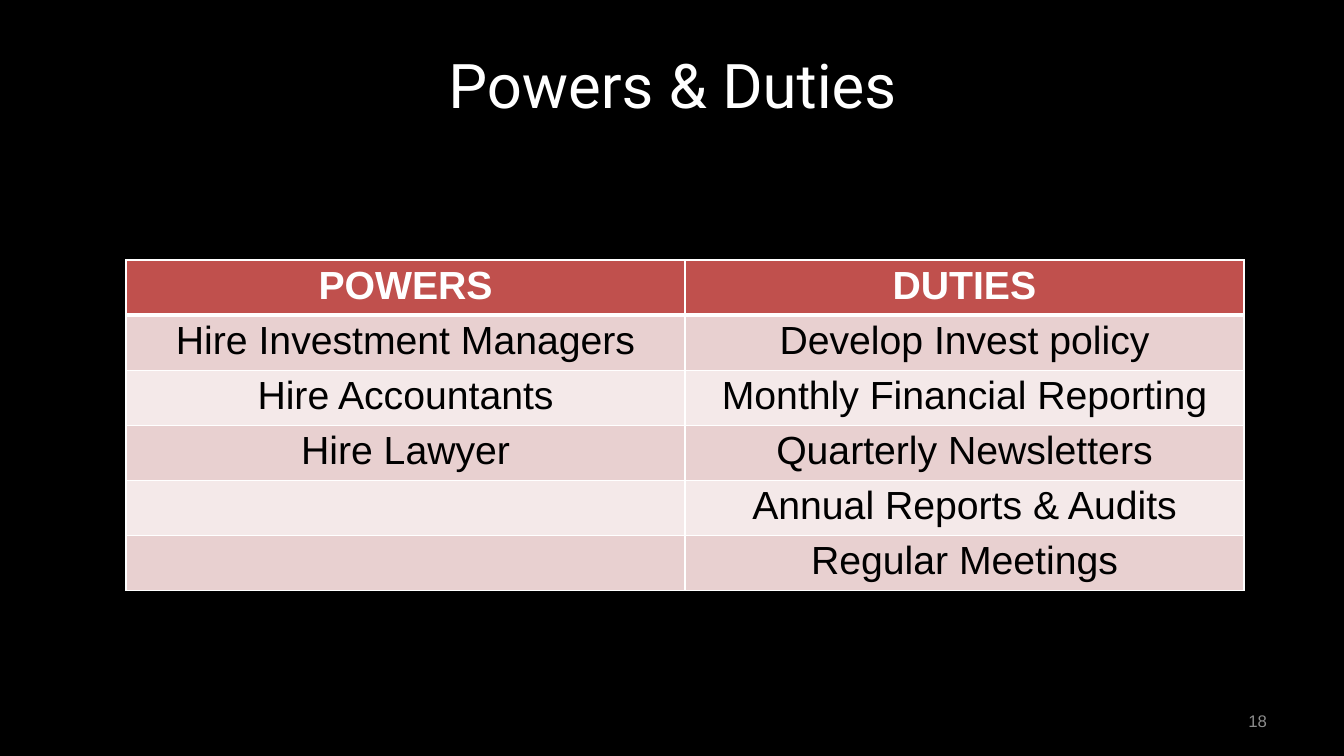
from lxml.etree import SubElement
from pptx import Presentation
from pptx.dml.color import RGBColor
from pptx.enum.text import MSO_ANCHOR as Anchor, PP_ALIGN as Align
from pptx.oxml.ns import qn
from pptx.util import Pt

# Content
TITLE = "Powers & Duties"
PAGE_NUMBER = "18"
ROWS = [
    ("POWERS", "DUTIES"),
    ("Hire Investment Managers", "Develop Invest policy"),
    ("Hire Accountants", "Monthly Financial Reporting"),
    ("Hire Lawyer", "Quarterly Newsletters"),
    ("", "Annual Reports & Audits"),
    ("", "Regular Meetings"),
]

# Colours
BLACK = RGBColor(0x00, 0x00, 0x00)
WHITE = RGBColor(0xFF, 0xFF, 0xFF)
GREY = RGBColor(0x8C, 0x8C, 0x8C)
HEADER_RED = RGBColor(0xC0, 0x50, 0x4D)
BANDS = [RGBColor(0xF4, 0xE9, 0xE9), RGBColor(0xE8, 0xD0, 0xD0)]

# Layout in px
SLIDE_WIDTH, SLIDE_HEIGHT = 1344, 756
TABLE_LEFT, TABLE_TOP, COLUMN_WIDTH, ROW_HEIGHT = 126, 260, 559, 54
CELL_MARGIN = 4
TITLE_INDENT = 112


def px(length):
    return round(length * 914400 / 100.8)


def write(frame, text, size, color, align, font="Arial", bold=False):
    paragraph = frame.paragraphs[0]
    paragraph.alignment = align
    run = paragraph.add_run()
    run.text = text
    run.font.name, run.font.size, run.font.bold = font, Pt(size), bold
    run.font.color.rgb = color


def add_text_frame(slide, left, top, width, height, anchor):
    box = slide.shapes.add_textbox(px(left), px(top), px(width), px(height))
    frame = box.text_frame
    frame.word_wrap = True
    frame.vertical_anchor = anchor
    return frame


def set_border(properties, side, points):
    line = SubElement(properties, qn(f"a:ln{side}"), w=str(Pt(points)))
    fill = SubElement(line, qn("a:solidFill"))
    SubElement(fill, qn("a:srgbClr"), val=str(WHITE))


def style_cell(cell, row):
    cell.margin_top = cell.margin_bottom = px(CELL_MARGIN)
    # Borders come before the fill in the cell properties
    properties = cell._tc.get_or_add_tcPr()
    thick_side = {0: "B", 1: "T"}.get(row)
    for side in "LRTB":
        set_border(properties, side, 3 if side == thick_side else 1)
    cell.fill.solid()
    cell.fill.fore_color.rgb = BANDS[row % 2] if row else HEADER_RED


def add_duties_table(slide):
    row_count, column_count = len(ROWS), len(ROWS[0])
    table = slide.shapes.add_table(
        row_count, column_count, px(TABLE_LEFT), px(TABLE_TOP),
        px(COLUMN_WIDTH * column_count), px(ROW_HEIGHT * row_count)).table
    for row, texts in enumerate(ROWS):
        for column, text in enumerate(texts):
            cell = table.cell(row, column)
            style_cell(cell, row)
            if text:
                write(cell.text_frame, text, 28, BLACK if row else WHITE,
                      Align.CENTER, bold=row == 0)


def main():
    presentation = Presentation()
    presentation.slide_width = px(SLIDE_WIDTH)
    presentation.slide_height = px(SLIDE_HEIGHT)
    slide = presentation.slides.add_slide(presentation.slide_layouts[6])
    slide.background.fill.solid()
    slide.background.fill.fore_color.rgb = BLACK

    # Title
    title = add_text_frame(slide, 126, 42, 991, 126, Anchor.TOP)
    title.margin_left = px(TITLE_INDENT)
    write(title, TITLE, 44, WHITE, Align.CENTER, font="Roboto")

    # Table
    add_duties_table(slide)

    # Page number
    number = add_text_frame(slide, 964, 701, 313, 40, Anchor.MIDDLE)
    write(number, PAGE_NUMBER, 12, GREY, Align.RIGHT)

    presentation.save("out.pptx")


if __name__ == "__main__":
    main()
